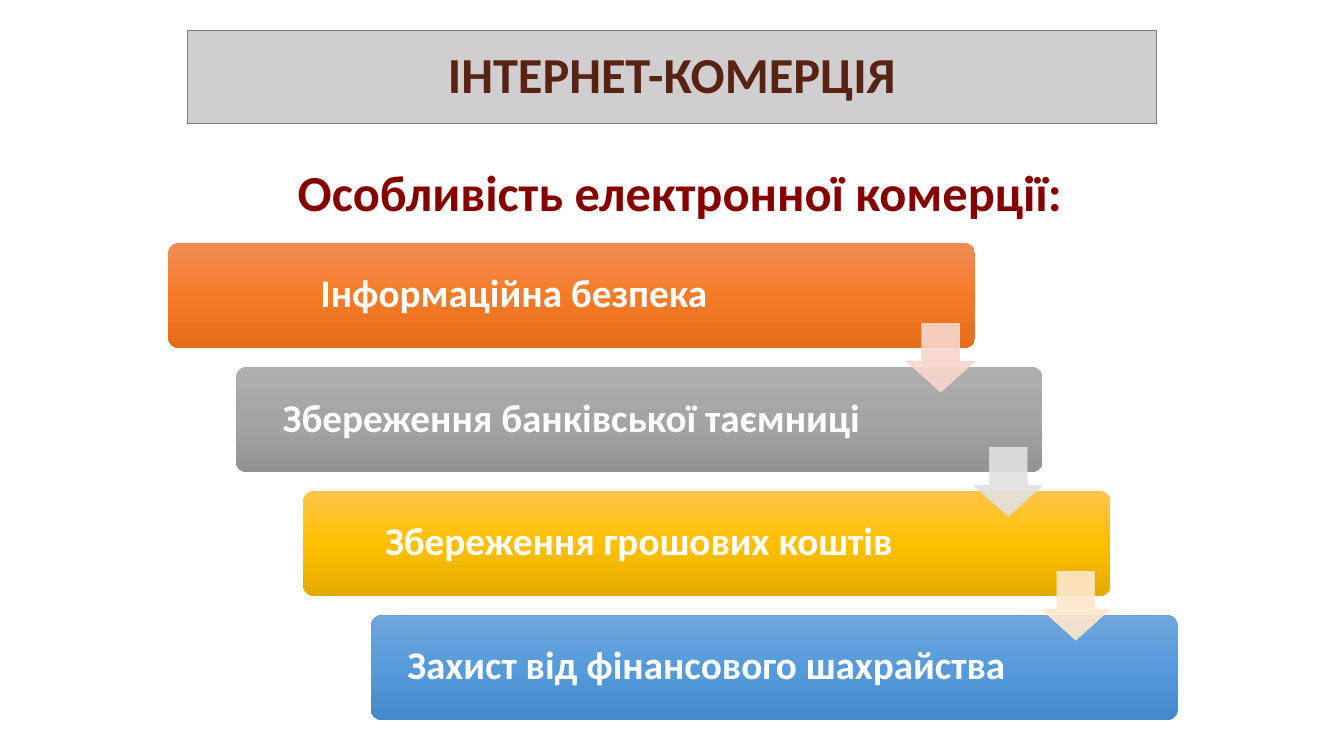
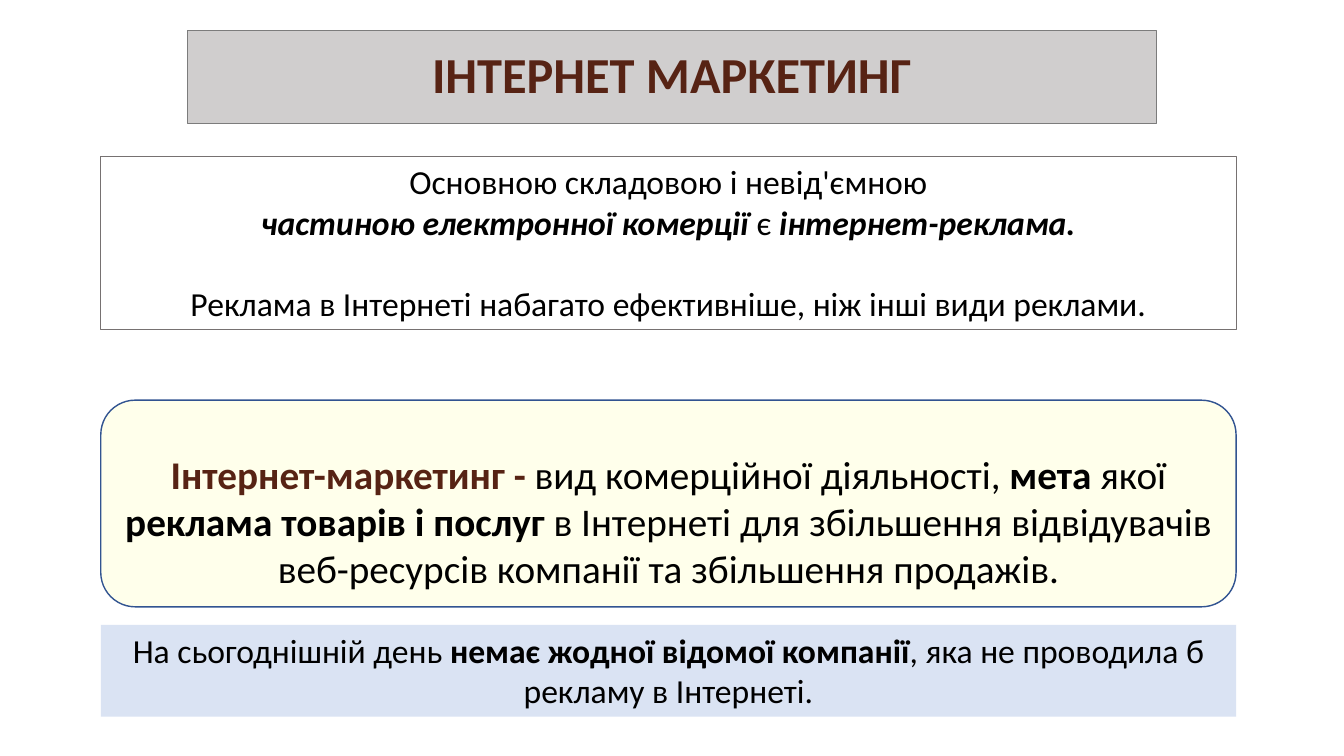
import copy
import pptx
import pptx.util
import pptx.dml.color
import pptx.enum.shapes
import pptx.enum.text
import pptx.oxml
import pptx.oxml.ns

Inches = pptx.util.Inches
Pt = pptx.util.Pt
KIND = pptx.enum.shapes.MSO_SHAPE
ANCHOR = pptx.enum.text.MSO_ANCHOR
qn = pptx.oxml.ns.qn

FONT = "Calibri"
BROWN = "572314"
BLACK = "000000"
WHITE = "FFFFFF"


def hue(code):
    return pptx.dml.color.RGBColor.from_string(code)


def write(frame, lines, size, color, anchor=ANCHOR.TOP):
    frame.word_wrap = True
    frame.auto_size = pptx.enum.text.MSO_AUTO_SIZE.NONE
    frame.vertical_anchor = anchor
    for n, line in enumerate(lines):
        para = frame.paragraphs[0] if n == 0 else frame.add_paragraph()
        para.alignment = pptx.enum.text.PP_ALIGN.CENTER
        for k, part in enumerate(line.split("*")):
            if part:
                run = para.add_run()
                run.text = part
                run.font.name = FONT
                run.font.size = Pt(size)
                run.font.bold = k % 2 == 1
                run.font.color.rgb = hue(color)


deck = pptx.Presentation()
deck.slide_width = Inches(13.33)
deck.slide_height = Inches(7.5)

slides = []
for name in ["ІНТЕРНЕТ-КОМЕРЦІЯ", "ІНТЕРНЕТ МАРКЕТИНГ"]:
    slide = deck.slides.add_slide(deck.slide_layouts[5])
    title = slide.shapes.title
    title.left, title.top = Inches(1.86), Inches(0.3)
    title.width, title.height = Inches(9.61), Inches(0.93)
    title.fill.solid()
    title.fill.fore_color.rgb = hue("D0CECE")
    title.line.color.rgb = hue("7C7C7C")
    title.line.width = Pt(0.75)
    write(title.text_frame, [f"*{name}*"], 36, BROWN, ANCHOR.MIDDLE)
    title.text_frame.paragraphs[0].line_spacing = 0.9
    slides.append(slide)

trade, market = slides

head = trade.shapes.add_textbox(Inches(2.1), Inches(1.55), Inches(9.29), Inches(0.71))
write(head.text_frame, ["*Особливість електронної комерції:*"], 36, "860000")

steps = [
    ("Інформаційна безпека", ["F18C57", "F67B28", "E56C19"], 1.27),
    ("Збереження банківської таємниці", ["AFAFAF", "A5A5A5", "939393"], 1.47),
    ("Збереження грошових коштів", ["FFC64B", "FFC000", "E3AB00"], 1.47),
    ("Захист від фінансового шахрайства", ["71A6DB", "559BDB", "448ACA"], 1.47),
]
DX, DY = 0.67, 1.23

for n, (label, shades, gap) in enumerate(steps):
    bar = trade.shapes.add_shape(
        KIND.ROUNDED_RECTANGLE,
        Inches(1.67 + n * DX), Inches(2.41 + n * DY), Inches(8), Inches(1.04))
    bar.adjustments[0] = 0.1
    bar.shadow.inherit = False
    bar.line.fill.background()
    bar.fill.gradient()
    bar.fill.gradient_angle = 270
    stops = next(bar.element.iter(qn("a:gsLst")))
    stops.insert(1, copy.deepcopy(stops[0]))
    for k, stop in enumerate(bar.fill.gradient_stops):
        stop.position = k / 2
        stop.color.rgb = hue(shades[k])
    frame = bar.text_frame
    frame.margin_left = frame.margin_top = frame.margin_bottom = Inches(0.12)
    frame.margin_right = Inches(gap)
    write(frame, [f"*{label}*"], 28, WHITE, ANCHOR.MIDDLE)
    frame.paragraphs[0].line_spacing = 0.9

for n, tint in enumerate(["F8D7CE", "E1E1E1", "FFE8CC"]):
    arrow = trade.shapes.add_shape(
        KIND.DOWN_ARROW,
        Inches(8.99 + n * DX), Inches(3.21 + n * DY), Inches(0.68), Inches(0.68))
    arrow.adjustments[0] = 0.55
    arrow.adjustments[1] = 0.45
    arrow.shadow.inherit = False
    arrow.fill.solid()
    arrow.fill.fore_color.rgb = hue(tint)
    arrow.line.color.rgb = hue(tint)
    arrow.line.width = Pt(0.5)
    for node in list(arrow.element.iter(qn("a:srgbClr"))):
        alpha = pptx.oxml.parse_xml(f'<a:alpha {pptx.oxml.ns.nsdecls("a")} val="90000"/>')
        node.append(alpha)

panels = [
    (KIND.ROUNDED_RECTANGLE, 3.97, 2.05, "FFFFEB", "325491", 1, 28, ANCHOR.BOTTOM, [
        "*Інтернет-маркетинг - *вид комерційної діяльності, *мета* якої "
        "*реклама товарів і послуг *в Інтернеті для збільшення відвідувачів "
        "веб-ресурсів компанії та збільшення продажів."]),
    (KIND.RECTANGLE, 1.55, 1.72, None, "767171", 0.75, 24, ANCHOR.TOP, [
        "Основною складовою і невід'ємною",
        "*частиною електронної комерції *є *інтернет-реклама.*",
        "Реклама в Інтернеті набагато ефективніше, ніж інші види реклами."]),
    (KIND.RECTANGLE, 6.2, 0.91, "DAE3F3", None, 0, 24, ANCHOR.TOP, [
        "На сьогоднішній день *немає жодної відомої компанії*, "
        "яка не проводила б рекламу в Інтернеті."]),
]
boxes = []
for kind, top, high, fill, edge, wide, size, anchor, lines in panels:
    box = market.shapes.add_shape(kind, Inches(1), Inches(top), Inches(11.26), Inches(high))
    box.shadow.inherit = False
    if fill:
        box.fill.solid()
        box.fill.fore_color.rgb = hue(fill)
    else:
        box.fill.background()
    if edge:
        box.line.color.rgb = hue(edge)
        box.line.width = Pt(wide)
    else:
        box.line.fill.background()
    write(box.text_frame, lines, size, BLACK, anchor)
    boxes.append(box)

term, intro, note = boxes
term.text_frame.margin_top = Inches(0.24)
term.text_frame.paragraphs[0].runs[0].font.color.rgb = hue(BROWN)
for run in intro.text_frame.paragraphs[1].runs:
    run.font.italic = run.font.bold
intro.text_frame.paragraphs[2].space_before = Pt(29)

deck.save("out.pptx")
